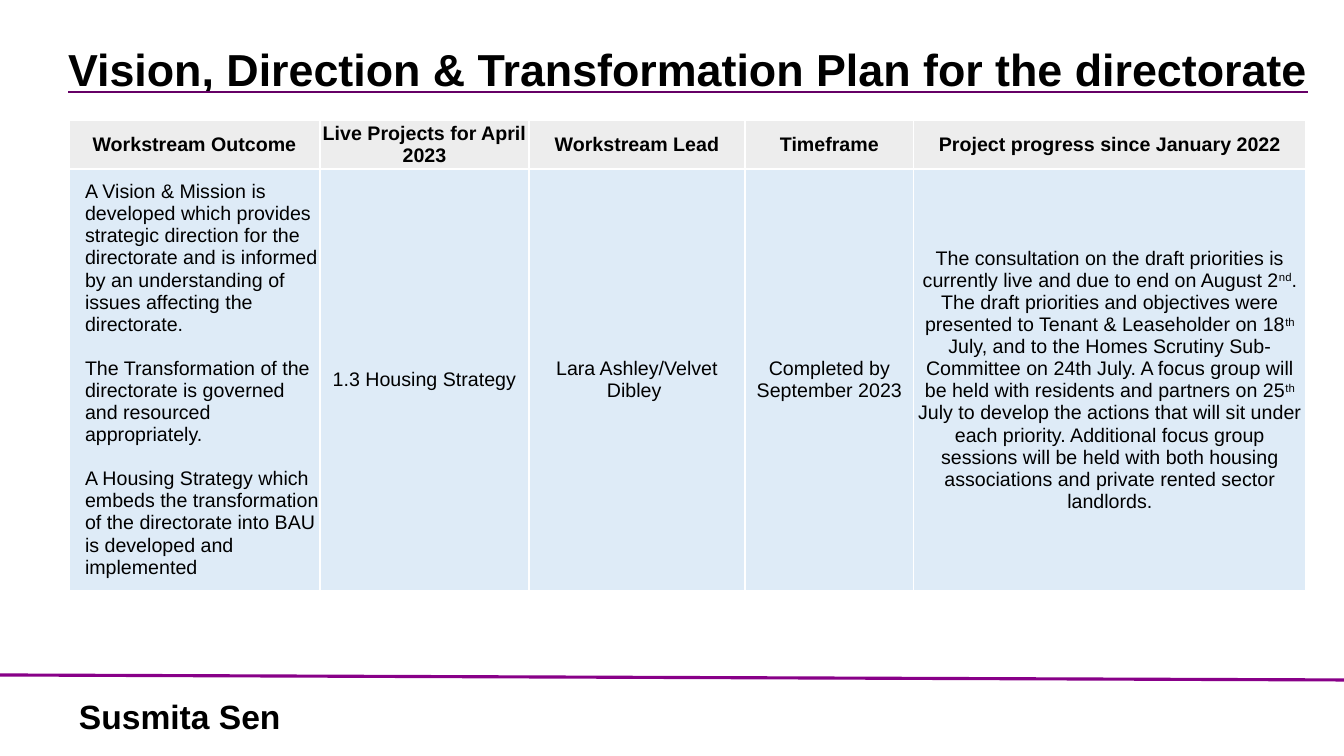
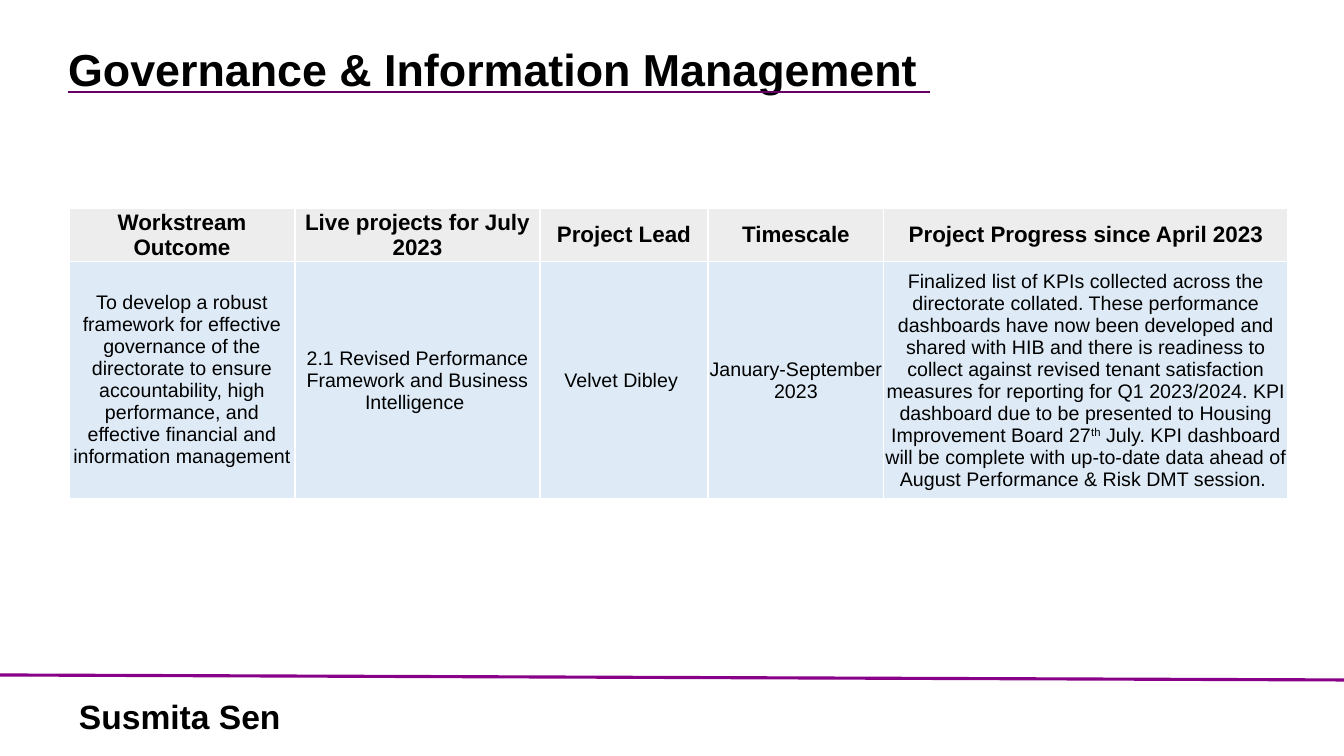
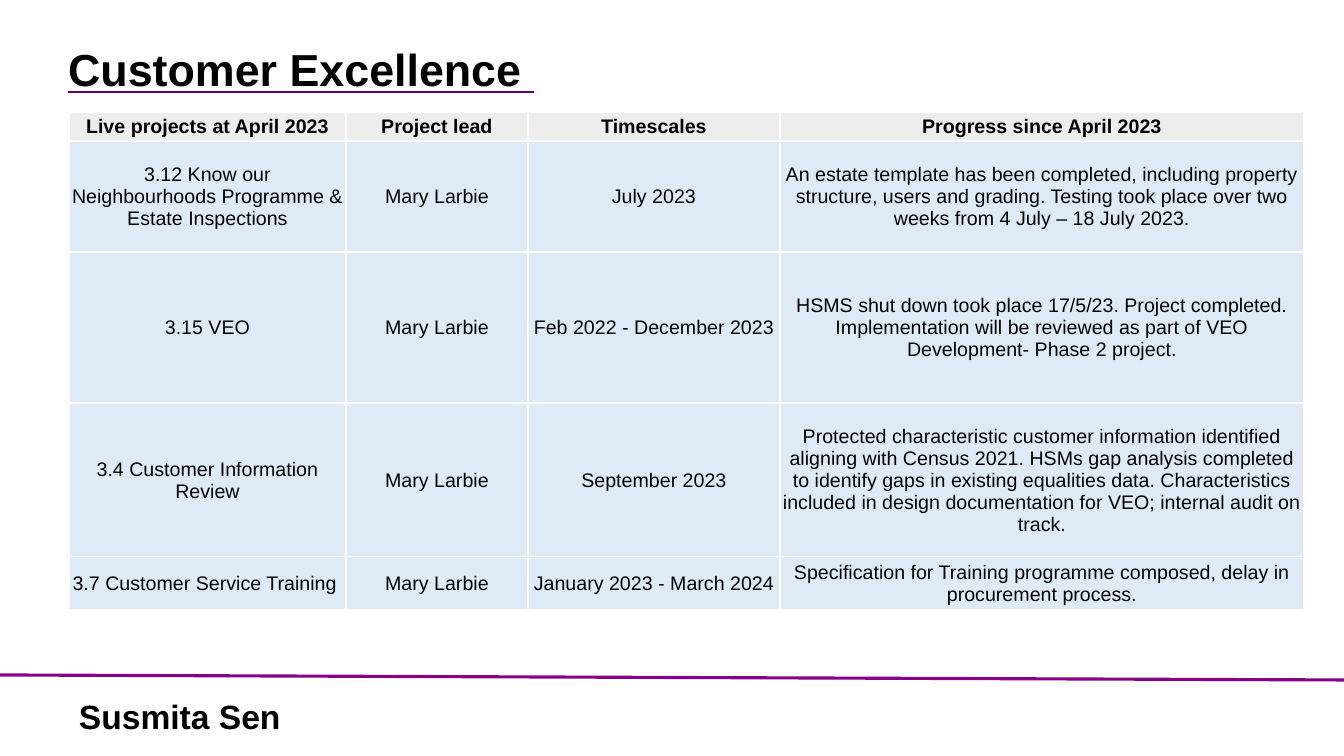
"""Build three directorate progress slides with a shared title, table and footer style."""
from dataclasses import dataclass

from lxml import etree
from pptx import Presentation
from pptx.dml.color import RGBColor
from pptx.enum.shapes import MSO_CONNECTOR
from pptx.enum.text import MSO_ANCHOR, PP_ALIGN
from pptx.oxml.ns import qn
from pptx.presentation import Presentation as Deck
from pptx.slide import Slide
from pptx.table import _Cell
from pptx.text.text import TextFrame, _Run
from pptx.util import Emu, Pt

LEFT, CENTER = PP_ALIGN.LEFT, PP_ALIGN.CENTER
MIDDLE = MSO_ANCHOR.MIDDLE
STRAIGHT = MSO_CONNECTOR.STRAIGHT
TITLE_ONLY = 5
PAGE_WIDTH, PAGE_HEIGHT = 1344, 756
EMU_PER_PX = 12192000 / PAGE_WIDTH
TABLE_LEFT = 69
OWNER = "Susmita Sen"


@dataclass(frozen=True)
class Theme:
    font: str = "Arial"
    text: str = "000000"
    rule: str = "880088"
    underline: str = "660066"
    header_fill: str = "EDEDED"
    body_fill: str = "DEEBF7"
    border: str = "FFFFFF"
    title_size: int = 32
    footer_size: int = 24
    body_size: int = 14
    rule_width: float = 2.25
    border_width: int = 1


@dataclass(frozen=True)
class Workstream:
    title: str
    top: int
    columns: tuple[int, ...]
    row_heights: tuple[int, ...]
    rows: tuple[tuple[str, ...], ...]
    header_size: int = 14
    first_align: PP_ALIGN = CENTER
    first_inset: int = 1
    paragraph_gap: int = 0


THEME = Theme()

WORKSTREAMS = (
    Workstream(
        title="Vision, Direction & Transformation Plan for the directorate",
        top=120,
        columns=(251, 209, 216, 169, 392),
        row_heights=(49, 397),
        first_align=LEFT,
        first_inset=16,
        paragraph_gap=16,
        rows=(
            ("Workstream Outcome", "Live Projects for April 2023", "Workstream Lead",
             "Timeframe", "Project progress since January 2022"),
            ("A Vision & Mission is developed which provides strategic direction for the "
             "directorate and is informed by an understanding of issues affecting the "
             "directorate.\n"
             "The Transformation of the directorate is governed and resourced appropriately.\n"
             "A Housing Strategy which embeds the transformation of the directorate into BAU "
             "is developed and implemented",
             "1.3 Housing Strategy",
             "Lara Ashley/Velvet Dibley ",
             "Completed by September 2023",
             "The consultation on the draft priorities is currently live and due to end on "
             "August 2^nd^. The draft priorities and objectives were presented to Tenant & "
             "Leaseholder on 18^th^ July, and to the Homes Scrutiny Sub-Committee on 24th July. "
             "A focus group will be held with residents and partners on 25^th^ July to develop "
             "the actions that will sit under each priority. Additional focus group sessions "
             "will be held with both housing associations and private rented sector landlords."),
        ),
    ),
    Workstream(
        title="Governance & Information Management ",
        top=208,
        columns=(226, 245, 168, 176, 404),
        row_heights=(50, 221),
        header_size=16,
        first_inset=0,
        rows=(
            ("Workstream Outcome", "Live projects for July 2023", "Project Lead",
             "Timescale", "Project Progress since April 2023"),
            ("To develop a robust framework for effective governance of the directorate to "
             "ensure accountability, high performance, and effective financial and information "
             "management",
             "2.1 Revised Performance Framework and Business Intelligence ",
             "Velvet Dibley ",
             "January-September 2023",
             "Finalized list of KPIs collected across the directorate collated. These "
             "performance dashboards have now been developed and shared with HIB and there is "
             "readiness to\n"
             "collect against revised tenant satisfaction measures for reporting for Q1 "
             "2023/2024. KPI dashboard due to be presented to Housing Improvement Board "
             "27^th^ July. KPI dashboard will be complete with up-to-date data ahead of August "
             "Performance & Risk DMT session. "),
        ),
    ),
    Workstream(
        title="Customer Excellence ",
        top=112,
        columns=(277, 182, 252, 524),
        row_heights=(29, 111, 151, 154, 53),
        rows=(
            ("Live projects at April 2023", "Project lead", "Timescales",
             "Progress since April 2023"),
            ("3.12 Know our Neighbourhoods Programme & Estate Inspections", "Mary Larbie",
             "July 2023",
             "An estate template has been completed, including property structure, users and "
             "grading. Testing took place over two weeks from 4 July – 18 July 2023."),
            ("3.15 VEO", "Mary Larbie", "Feb 2022 - December 2023",
             "HSMS shut down took place 17/5/23. Project completed. Implementation will be "
             "reviewed as part of VEO Development- Phase 2 project."),
            ("3.4 Customer Information Review", "Mary Larbie", "September 2023",
             "Protected characteristic customer information identified aligning with Census "
             "2021. HSMs gap analysis completed to identify gaps in existing equalities data. "
             "Characteristics included in design documentation for VEO; internal audit on "
             "track."),
            ("3.7 Customer Service Training ", "Mary Larbie", "January 2023 - March 2024",
             "Specification for Training programme composed, delay in procurement process."),
        ),
    ),
)


def px(length: int) -> Emu:
    """Turn a length in px into EMU."""
    return Emu(round(length * EMU_PER_PX))


def add_solid_fill(parent: etree._Element, color: str) -> None:
    """Append a solid fill to an XML element."""
    fill = etree.SubElement(parent, qn("a:solidFill"))
    etree.SubElement(fill, qn("a:srgbClr"), val=color)


def color_underline(span: _Run, color: str) -> None:
    """Give an underlined run its own line colour."""
    underline = etree.Element(qn("a:uFill"))
    add_solid_fill(underline, color)
    span.font.underline = True
    span._r.rPr.find(qn("a:latin")).addprevious(underline)


def write_text(frame: TextFrame, text: str, *, size: int, bold: bool = False,
               align: PP_ALIGN = LEFT, line_spacing: float = 1.0, gap: int = 0,
               underline: str | None = None) -> None:
    """Fill a frame, one paragraph a line, with ^carets^ around superscripts."""
    frame.word_wrap = True
    for index, line in enumerate(text.split("\n")):
        para = frame.add_paragraph() if index else frame.paragraphs[0]
        para.alignment = align
        para.line_spacing = line_spacing
        para.space_before = Pt(gap if index else 0)
        for position, piece in enumerate(line.split("^")):
            span = para.add_run()
            span.text = piece
            span.font.size = Pt(size)
            span.font.bold = bold
            span.font.color.rgb = RGBColor.from_string(THEME.text)
            span.font.name = THEME.font
            if position % 2:
                span._r.get_or_add_rPr().set("baseline", "30000")
            if underline:
                color_underline(span, underline)


def style_cell(cell: _Cell, fill: str, left: int, inset: int) -> None:
    """Set the borders, fill, anchor and margins of a cell."""
    properties = cell._tc.get_or_add_tcPr()
    for side in ("lnL", "lnR", "lnT", "lnB"):
        border = etree.SubElement(properties, qn(f"a:{side}"),
                                  w=str(Pt(THEME.border_width)))
        add_solid_fill(border, THEME.border)
    cell.fill.solid()
    cell.fill.fore_color.rgb = RGBColor.from_string(fill)
    cell.vertical_anchor = MIDDLE
    cell.margin_left = px(left)
    cell.margin_right = cell.margin_top = px(inset)
    cell.margin_bottom = px(0)


def add_title(page: Slide, text: str) -> None:
    """Place and format the title placeholder."""
    title = page.shapes.title
    title.left, title.top, title.width, title.height = map(px, (58, 26, 1286, 93))
    title.text_frame.vertical_anchor = MIDDLE
    write_text(title.text_frame, text, size=THEME.title_size, bold=True,
               line_spacing=0.9, underline=THEME.underline)


def add_footer(page: Slide) -> None:
    """Draw the footer rule and the owner's name."""
    rule = page.shapes.add_connector(STRAIGHT, px(0), px(675), px(PAGE_WIDTH), px(680))
    rule.line.color.rgb = RGBColor.from_string(THEME.rule)
    rule.line.width = Pt(THEME.rule_width)
    etree.SubElement(rule._element.spPr, qn("a:effectLst"))
    box = page.shapes.add_textbox(px(TABLE_LEFT), px(696), px(390), px(47))
    write_text(box.text_frame, OWNER, size=THEME.footer_size, bold=True, line_spacing=0.9)


def add_progress_table(page: Slide, stream: Workstream) -> None:
    """Draw the progress table of a workstream."""
    table = page.shapes.add_table(
        len(stream.rows), len(stream.columns), px(TABLE_LEFT), px(stream.top),
        px(sum(stream.columns)), px(sum(stream.row_heights))).table
    table.horz_banding = False
    for column, width in zip(table.columns, stream.columns):
        column.width = px(width)
    for row, height in zip(table.rows, stream.row_heights):
        row.height = px(height)
    for row_index, texts in enumerate(stream.rows):
        header = row_index == 0
        for column_index, text in enumerate(texts):
            cell = table.cell(row_index, column_index)
            first = column_index == 0 and not header
            inset = 0 if header or (first and stream.first_inset != 1) else 1
            style_cell(cell, THEME.header_fill if header else THEME.body_fill,
                       stream.first_inset if first else inset, inset)
            write_text(cell.text_frame, text, bold=header,
                       size=stream.header_size if header else THEME.body_size,
                       align=stream.first_align if first else CENTER,
                       gap=stream.paragraph_gap)


def add_page(deck: Deck, stream: Workstream) -> None:
    """Add the slide of a workstream."""
    page = deck.slides.add_slide(deck.slide_layouts[TITLE_ONLY])
    add_footer(page)
    add_title(page, stream.title)
    add_progress_table(page, stream)


def main() -> None:
    """Build and save the deck."""
    deck = Presentation()
    deck.slide_width, deck.slide_height = px(PAGE_WIDTH), px(PAGE_HEIGHT)
    for stream in WORKSTREAMS:
        add_page(deck, stream)
    deck.save("out.pptx")


if __name__ == "__main__":
    main()
